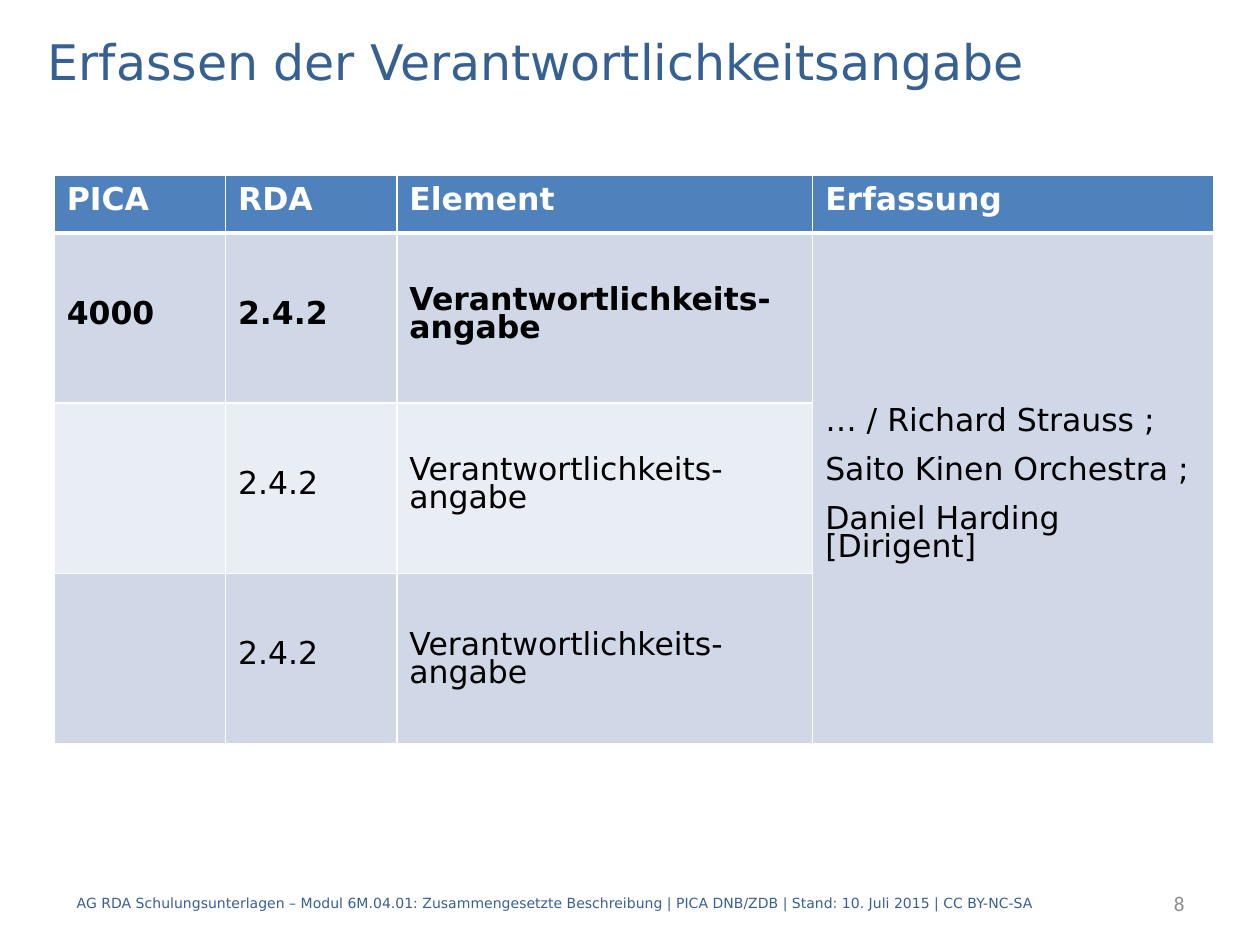
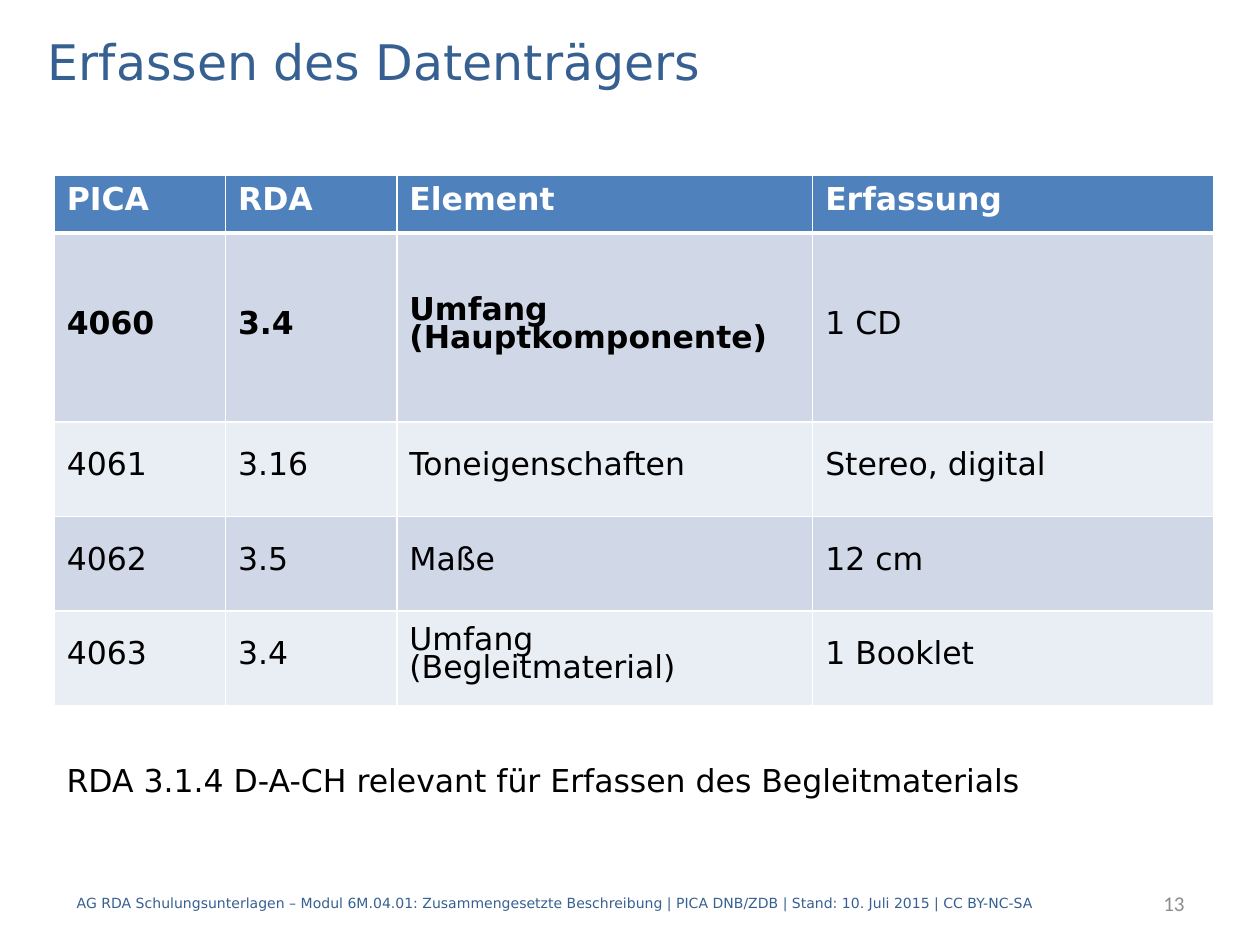
from dataclasses import dataclass

from lxml import etree
from pptx import Presentation
from pptx.dml.color import RGBColor
from pptx.enum import text
from pptx.oxml import ns
from pptx.util import Inches, Pt

COLORS = {
    "title": "376092",
    "header": "4F81BD",
    "band_dark": "D0D8E8",
    "band_light": "E9EDF4",
    "white": "FFFFFF",
    "black": "000000",
    "number": "8C8C8C",
}
FONT = "DejaVu Sans"
HEADINGS = ("PICA", "RDA", "Element", "Erfassung")
COLUMN_WIDTHS = (1.36, 1.36, 3.3, 3.18)
HEADER_HEIGHT = 0.46
FOOTER = (
    "AG RDA Schulungsunterlagen – Modul 6M.04.01: Zusammengesetzte Beschreibung"
    " | PICA DNB/ZDB | Stand: 10. Juli 2015 | CC BY-NC-SA"
)
BODY_SPACING = {"line_spacing": Pt(16), "space_before": Pt(6), "space_after": Pt(6)}


@dataclass(frozen=True)
class Style:
    size: float
    color: str
    bold: bool = False
    font: str = FONT
    align: text.PP_ALIGN = text.PP_ALIGN.LEFT


@dataclass(frozen=True)
class Box:
    left: float
    top: float
    width: float
    height: float

    def lengths(self) -> list:
        return [Inches(v) for v in (self.left, self.top, self.width, self.height)]


@dataclass(frozen=True)
class Row:
    height: float
    cells: tuple
    bold_columns: tuple = ()


@dataclass(frozen=True)
class TableSlide:
    title: str
    number: str
    rows: tuple
    merge_last_column: bool = False
    note: str = ""


TITLE_STYLE = Style(28, "title")
HEADER_STYLE = Style(18, "white", bold=True)
BODY_STYLE = Style(18, "black")
BOLD_STYLE = Style(18, "black", bold=True)
FOOTER_STYLE = Style(8, "title")
NUMBER_STYLE = Style(12, "number", font="Calibri", align=text.PP_ALIGN.RIGHT)

TITLE_BOX = Box(0.28, 0.2, 9.45, 0.56)
TABLE_BOX = Box(0.43, 1.39, 9.2, HEADER_HEIGHT)
NOTE_BOX = Box(0.43, 5.91, 9.45, 0.56)
FOOTER_BOX = Box(0.51, 6.97, 8.35, 0.4)
NUMBER_BOX = Box(7.91, 6.97, 1.59, 0.4)

SLIDES = (
    TableSlide(
        "Erfassen der Verantwortlichkeitsangabe",
        "8",
        (
            Row(
                1.35,
                (
                    "4000",
                    "2.4.2",
                    "Verantwortlichkeits-angabe",
                    "… / Richard Strauss ;\nSaito Kinen Orchestra ;\n"
                    "Daniel Harding [Dirigent]",
                ),
                bold_columns=(0, 1, 2),
            ),
            Row(1.35, ("", "2.4.2", "Verantwortlichkeits- angabe", "")),
            Row(1.35, ("", "2.4.2", "Verantwortlichkeits-angabe", "")),
        ),
        merge_last_column=True,
    ),
    TableSlide(
        "Erfassen des Datenträgers",
        "13",
        (
            Row(1.5, ("4060", "3.4", "Umfang (Hauptkomponente)", "1 CD"), (0, 1, 2)),
            Row(0.75, ("4061", "3.16", "Toneigenschaften", "Stereo, digital")),
            Row(0.75, ("4062", "3.5", "Maße", "12 cm")),
            Row(0.75, ("4063", "3.4", "Umfang (Begleitmaterial)", "1 Booklet")),
        ),
        note="RDA 3.1.4 D-A-CH relevant für Erfassen des Begleitmaterials",
    ),
)


def rgb(name: str) -> RGBColor:
    return RGBColor.from_string(COLORS[name])


def write(tf, content: str, style: Style, spacing: dict | None = None) -> None:
    """Fill a text frame, one paragraph per line of content."""
    for i, line in enumerate(content.split("\n")):
        p = tf.add_paragraph() if i else tf.paragraphs[0]
        p.alignment = style.align
        for name, value in (spacing or {}).items():
            setattr(p, name, value)
        r = p.add_run()
        r.text = line
        font = {"size": Pt(style.size), "bold": style.bold, "name": style.font}
        for name, value in font.items():
            setattr(r.font, name, value)
        r.font.color.rgb = rgb(style.color)


def format_frame(tf) -> None:
    frame = {
        "word_wrap": True,
        "auto_size": text.MSO_AUTO_SIZE.NONE,
        "vertical_anchor": text.MSO_ANCHOR.MIDDLE,
    }
    for name, value in frame.items():
        setattr(tf, name, value)


def add_text(s, box: Box, content: str, style: Style) -> None:
    tf = s.shapes.add_textbox(*box.lengths()).text_frame
    format_frame(tf)
    write(tf, content, style)


def set_title(s, content: str) -> None:
    sp = s.shapes.title
    sp.left, sp.top, sp.width, sp.height = TITLE_BOX.lengths()
    format_frame(sp.text_frame)
    write(sp.text_frame, content, TITLE_STYLE)


def set_borders(cell, top: float, bottom: float) -> None:
    """Draw white cell borders; widths are in points."""
    tc_pr = cell._tc.get_or_add_tcPr()
    for side, width in {"L": 1, "R": 1, "T": top, "B": bottom}.items():
        ln = etree.SubElement(tc_pr, ns.qn(f"a:ln{side}"), w=str(Pt(width)))
        fill = etree.SubElement(ln, ns.qn("a:solidFill"))
        etree.SubElement(fill, ns.qn("a:srgbClr"), val=COLORS["white"])


def format_cell(cell, fill: str, top: float = 1, bottom: float = 1) -> None:
    set_borders(cell, top, bottom)
    cell.fill.solid()
    cell.fill.fore_color.rgb = rgb(fill)


def add_table(s, data: TableSlide):
    shape = s.shapes.add_table(
        len(data.rows) + 1, len(HEADINGS), *TABLE_BOX.lengths()
    )
    table = shape.table
    table.first_row = table.horz_banding = False
    for column, width in zip(table.columns, COLUMN_WIDTHS):
        column.width = Inches(width)

    table.rows[0].height = Inches(HEADER_HEIGHT)
    for c, heading in enumerate(HEADINGS):
        cell = table.cell(0, c)
        format_cell(cell, "header", bottom=3)
        write(cell.text_frame, heading, HEADER_STYLE)

    for r, row in enumerate(data.rows, start=1):
        table.rows[r].height = Inches(row.height)
        for c, content in enumerate(row.cells):
            cell = table.cell(r, c)
            band = "band_dark" if r % 2 else "band_light"
            format_cell(cell, band, top=3 if r == 1 else 1)
            cell.vertical_anchor = text.MSO_ANCHOR.MIDDLE
            if content:
                style = BOLD_STYLE if c in row.bold_columns else BODY_STYLE
                write(cell.text_frame, content, style, BODY_SPACING)

    if data.merge_last_column:
        last = len(HEADINGS) - 1
        table.cell(1, last).merge(table.cell(len(data.rows), last))
    return table


def add_slide(prs, data: TableSlide) -> None:
    s = prs.slides.add_slide(prs.slide_layouts.get_by_name("Title Only"))
    set_title(s, data.title)
    table = add_table(s, data)
    if data.merge_last_column:
        table.cell(len(data.rows), 2).margin_top = Inches(0.13)
    add_text(s, FOOTER_BOX, FOOTER, FOOTER_STYLE)
    add_text(s, NUMBER_BOX, data.number, NUMBER_STYLE)
    if data.note:
        add_text(s, NOTE_BOX, data.note, BODY_STYLE)


def main() -> None:
    prs = Presentation()
    prs.slide_width, prs.slide_height = Inches(10), Inches(7.5)
    for data in SLIDES:
        add_slide(prs, data)
    prs.save("out.pptx")


if __name__ == "__main__":
    main()
